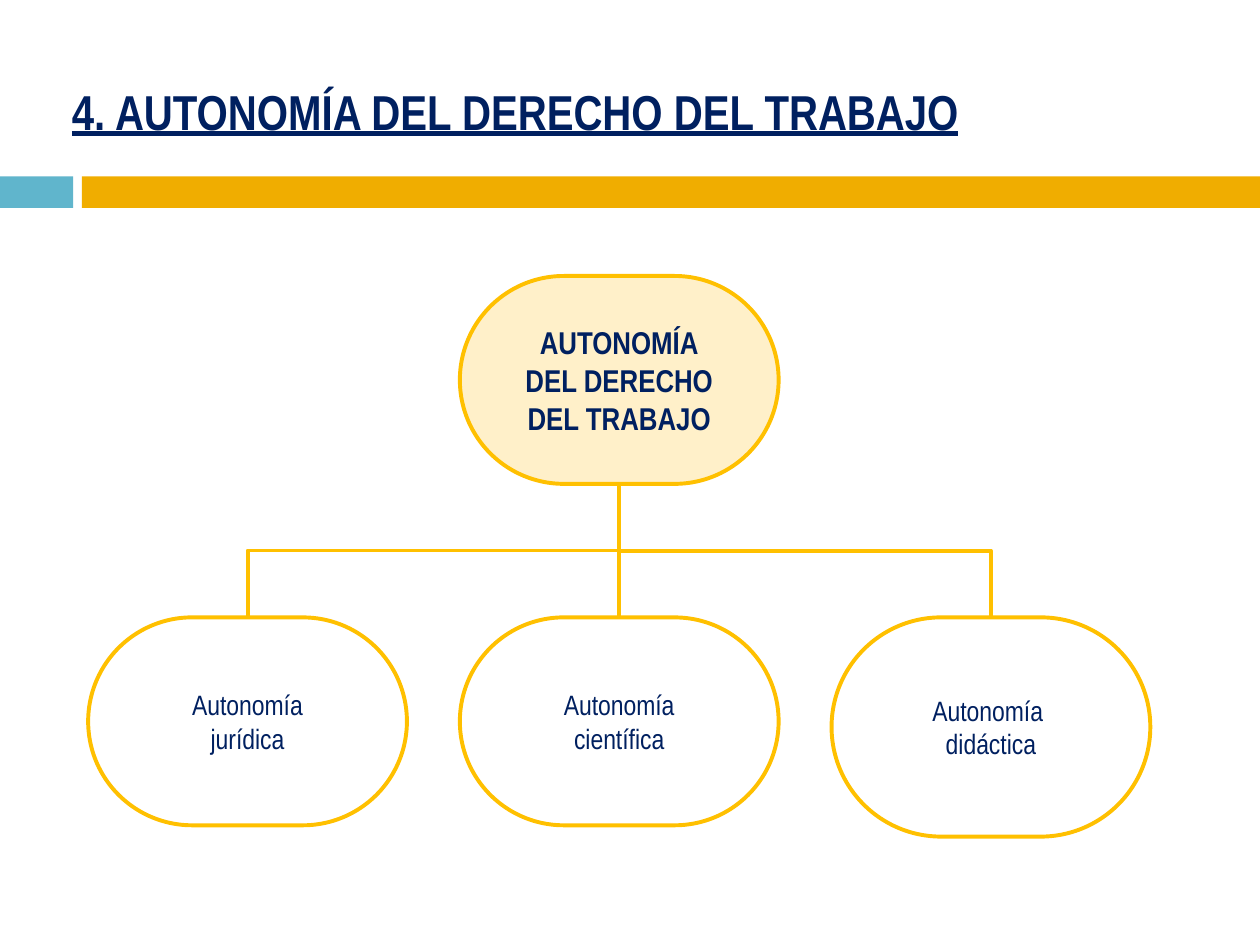
from dataclasses import dataclass

from lxml.etree import SubElement
from pptx import Presentation
from pptx.dml.color import RGBColor
from pptx.enum.shapes import MSO_CONNECTOR, MSO_SHAPE
from pptx.enum.text import MSO_ANCHOR, MSO_AUTO_SIZE, PP_ALIGN
from pptx.oxml.ns import qn
from pptx.util import Inches, Pt


@dataclass(frozen=True)
class Theme:
    font: str = "Arial Narrow"
    ink: str = "002060"
    outline: str = "FFC000"
    root_fill: str = "FFF0C9"
    accent: str = "60B5CC"
    band: str = "F0AD00"
    title_size: int = 28
    root_size: int = 18
    branch_size: int = 16
    line_width: float = 2.25


def write_text(tf, lines, *, font, size, color, bold=False, underline=False,
               align=PP_ALIGN.LEFT):
    tf.vertical_anchor = MSO_ANCHOR.MIDDLE
    tf.auto_size = MSO_AUTO_SIZE.NONE
    for i, line in enumerate(lines):
        p = tf.paragraphs[0] if i == 0 else tf.add_paragraph()
        p.alignment = align
        r = p.add_run()
        r.text = line
        r.font.name, r.font.size = font, Pt(size)
        r.font.bold, r.font.underline = bold, underline
        r.font.color.rgb = RGBColor.from_string(color)


class SlideBuilder:
    COLUMNS, ROWS = 100, 75

    def __init__(self, prs, theme):
        self.theme = theme
        self.cell_w = prs.slide_width / self.COLUMNS
        self.cell_h = prs.slide_height / self.ROWS
        self.s = prs.slides.add_slide(prs.slide_layouts[5])
        self.shapes = self.s.shapes

    def place(self, x, y):
        return round(x * self.cell_w), round(y * self.cell_h)

    def title(self, text, x, y, w, h):
        sp = self.s.shapes.title
        sp.left, sp.top = self.place(x, y)
        sp.width, sp.height = self.place(w, h)
        sp.text_frame.word_wrap = True
        t = self.theme
        write_text(sp.text_frame, [text], font=t.font, size=t.title_size,
                   color=t.ink, bold=True, underline=True)

    def shape(self, kind, x, y, w, h, fill=None):
        sp = self.shapes.add_shape(kind, *self.place(x, y), *self.place(w, h))
        sp.shadow.inherit = False
        if fill:
            sp.fill.solid()
            sp.fill.fore_color.rgb = RGBColor.from_string(fill)
        else:
            sp.fill.background()
        return sp

    def bar(self, x, y, w, h, fill):
        self.shape(MSO_SHAPE.RECTANGLE, x, y, w, h, fill).line.fill.background()

    def start_group(self):
        self.shapes = self.s.shapes.add_group_shape().shapes

    def node(self, lines, x, y, w, h, size, fill=None, bold=False):
        t = self.theme
        sp = self.shape(MSO_SHAPE.ROUNDED_RECTANGLE, x, y, w, h, fill)
        sp.adjustments[0] = 0.5
        self.stroke(sp.line)
        tf = sp.text_frame
        tf.word_wrap = False
        tf.margin_left = tf.margin_right = tf.margin_top = tf.margin_bottom = 0
        write_text(tf, lines, font=t.font, size=size, color=t.ink, bold=bold,
                   align=PP_ALIGN.CENTER)

    def stroke(self, line):
        line.color.rgb = RGBColor.from_string(self.theme.outline)
        line.width = Pt(self.theme.line_width)

    def branch(self, x1, y1, x2, y2):
        if x1 == x2:
            kind, begin, end = MSO_CONNECTOR.STRAIGHT, (x1, y1), (x2, y2)
        else:
            kind = MSO_CONNECTOR.ELBOW
            cx, cy = (x1 + x2) / 2, (y1 + y2) / 2
            dx, dy = (x2 - x1) / 2, (y2 - y1) / 2
            begin, end = (cx - dy, cy + dx), (cx + dy, cy - dx)
        cxn = self.shapes.add_connector(kind, *self.place(*begin), *self.place(*end))
        self.stroke(cxn.line)
        sp_pr = cxn._element.spPr
        SubElement(sp_pr, qn("a:effectLst"))
        if kind == MSO_CONNECTOR.ELBOW:
            sp_pr.find(qn("a:xfrm")).set("rot", "5400000")


def main():
    prs = Presentation()
    prs.slide_width, prs.slide_height = Inches(10), Inches(7.5)
    theme = Theme()
    slide = SlideBuilder(prs, theme)

    slide.bar(0, 14, 5.8, 2.5, theme.accent)
    slide.bar(6.5, 14, 93.5, 2.5, theme.band)
    slide.title("4. AUTONOMÍA DEL DERECHO DEL TRABAJO", 4.7, 5.5, 83.8, 6.6)

    left, pitch, node_w, node_h = 7, 29.5, 25.3, 16.5
    root_top, branch_top = 21.9, 49
    branches = [
        (["Autonomía", "jurídica"], node_h),
        (["Autonomía", "científica"], node_h),
        (["Autonomía ", "didáctica"], 17.4),
    ]
    lefts = [left + i * pitch for i in range(len(branches))]
    root_left = lefts[1]

    slide.start_group()
    for x in reversed(lefts):
        slide.branch(x + node_w / 2, branch_top,
                     root_left + node_w / 2, root_top + node_h)
    slide.node(["AUTONOMÍA", "DEL DERECHO", "DEL TRABAJO"], root_left, root_top,
               node_w, node_h, theme.root_size, theme.root_fill, bold=True)
    for x, (lines, h) in zip(lefts, branches):
        slide.node(lines, x, branch_top, node_w, h, theme.branch_size)

    prs.save("out.pptx")


if __name__ == "__main__":
    main()
